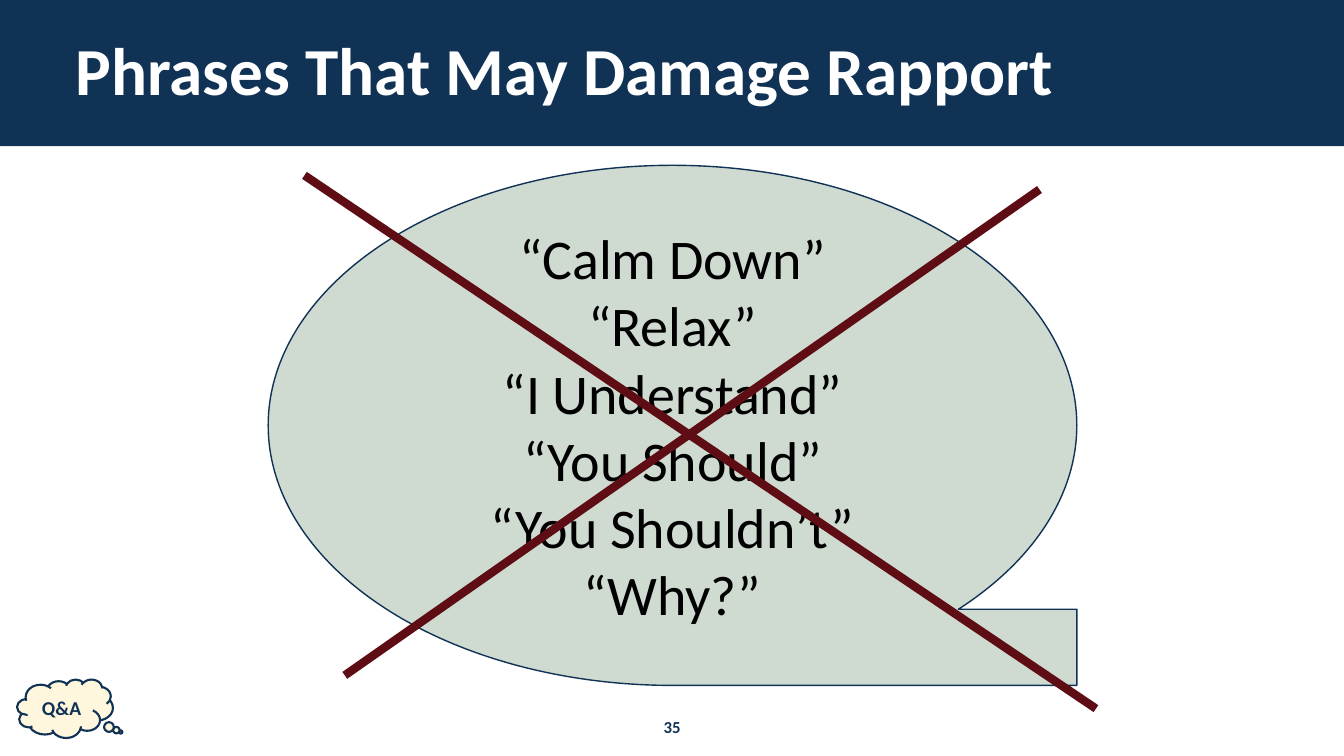
from lxml import etree
from pptx import Presentation
from pptx.dml.color import RGBColor
from pptx.enum.shapes import MSO_CONNECTOR, MSO_SHAPE
from pptx.enum.text import MSO_ANCHOR, PP_ALIGN
from pptx.oxml.ns import qn
from pptx.util import Inches, Pt

NAVY = "103255"
MAROON = "5F0D14"
SAGE = "CFDBD0"
CREAM = "FFF7DD"
WHITE = "FFFFFF"
BLACK = "000000"

PHRASES = ["“Calm Down”", "“Relax”", "“I Understand”",
           "“You Should”", "“You Shouldn’t”", "“Why?”"]
STRIKES = [((3.02, 1.74), (10.87, 7.03)), ((3.42, 6.7), (10.31, 1.88))]


def color(value):
    return RGBColor.from_string(value)


class SlideBuilder:
    """Holds the style and the current slide, and adds its elements."""

    font = "Calibri"

    def __init__(self, presentation):
        self.slide = presentation.slides.add_slide(presentation.slide_layouts[5])

    def set_text(self, frame, lines, size, ink, bold=False, align=PP_ALIGN.CENTER, spacing=1.0):
        frame.word_wrap = True
        frame.vertical_anchor = MSO_ANCHOR.MIDDLE
        frame.margin_left = frame.margin_right = Inches(0)
        frame.margin_top = frame.margin_bottom = Inches(0)
        frame.text = "\n".join(lines)
        for paragraph in frame.paragraphs:
            paragraph.alignment = align
            paragraph.line_spacing = spacing
            for run in paragraph.runs:
                run.font.name = self.font
                run.font.size = Pt(size)
                run.font.bold = bold
                run.font.color.rgb = color(ink)

    def title(self, text, box):
        title = self.slide.shapes.title
        title.left, title.top, title.width, title.height = map(Inches, box)
        self.set_text(title.text_frame, [text], 48, WHITE, True, PP_ALIGN.LEFT, 0.9)
        return title

    def shape(self, preset, box, fill, line_width=0):
        shape = self.slide.shapes.add_shape(preset, *map(Inches, box))
        shape.shadow.inherit = False
        shape.fill.solid()
        shape.fill.fore_color.rgb = color(fill)
        if line_width:
            shape.line.color.rgb = color(NAVY)
            shape.line.width = Pt(line_width)
        else:
            shape.line.fill.background()
        return shape

    def label(self, text, box, size):
        label = self.slide.shapes.add_textbox(*map(Inches, box))
        self.set_text(label.text_frame, [text], size, NAVY, True)

    def strike(self, start, end):
        strike = self.slide.shapes.add_connector(
            MSO_CONNECTOR.STRAIGHT, *map(Inches, start + end))
        strike.line.color.rgb = color(MAROON)
        strike.line.width = Pt(6)
        etree.SubElement(strike.element.spPr, qn("a:effectLst"))
        return strike

    def group(self, members):
        self.slide.shapes.add_group_shape(members)


def main():
    presentation = Presentation()
    presentation.slide_width = Inches(13.33)
    presentation.slide_height = Inches(7.5)
    builder = SlideBuilder(presentation)

    heading = builder.title("Phrases That May Damage Rapport", (0.75, 0.4, 11.84, 0.67))
    banner = builder.shape(MSO_SHAPE.RECTANGLE, (0, 0, 13.33, 1.45), NAVY)
    heading.element.addprevious(banner.element)

    builder.label("35", (6.09, 7.06, 1.15, 0.3), 12)

    cloud = builder.shape(MSO_SHAPE.CLOUD_CALLOUT, (0.17, 6.74, 0.95, 0.58), CREAM, 1.5)
    cloud.adjustments[0] = 0.582
    cloud.adjustments[1] = 0.4
    builder.set_text(cloud.text_frame, ["Q&A"], 14, NAVY, True)

    bubble = builder.shape(MSO_SHAPE.FLOWCHART_SEQUENTIAL_ACCESS_STORAGE,
                           (2.66, 1.64, 8.02, 5.16), SAGE, 1)
    builder.set_text(bubble.text_frame, PHRASES, 40, BLACK)
    builder.group([bubble] + [builder.strike(start, end) for start, end in STRIKES])

    presentation.save("out.pptx")


if __name__ == "__main__":
    main()
